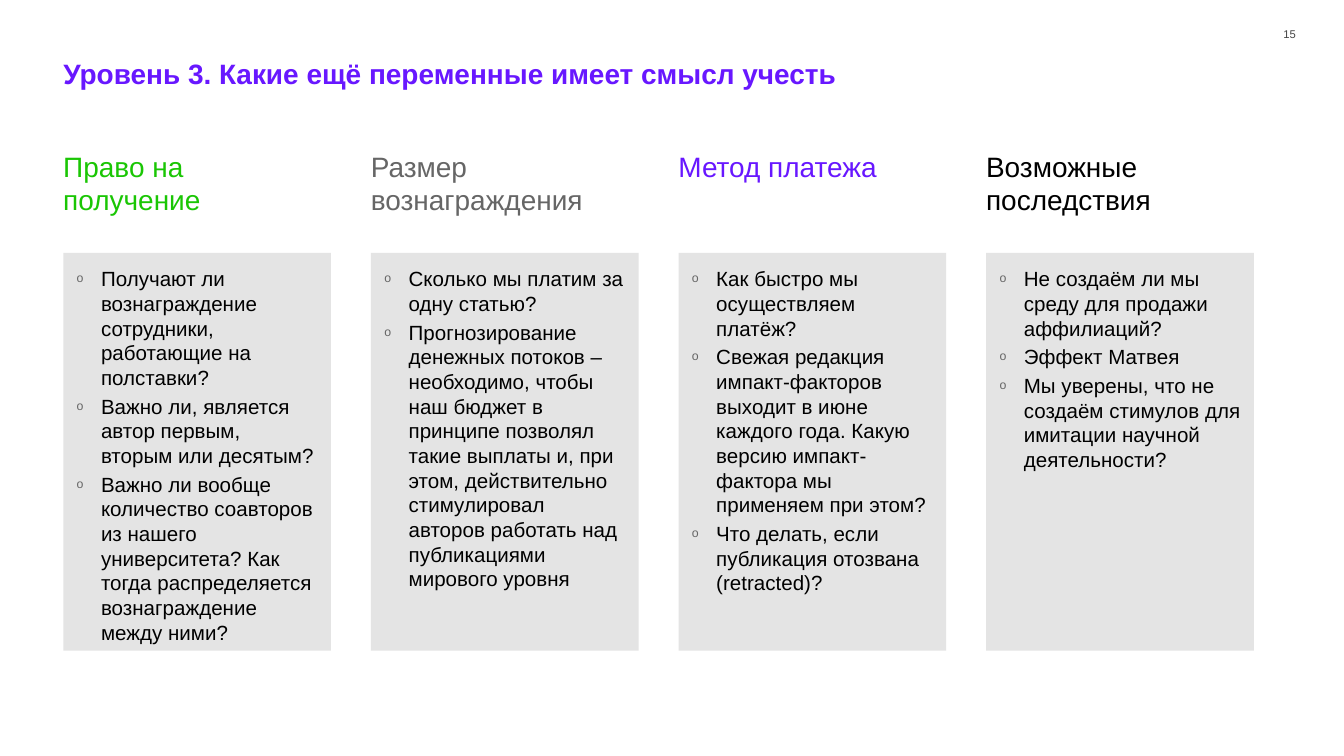
from dataclasses import dataclass

from lxml import etree
from pptx import Presentation
from pptx.dml.color import RGBColor
from pptx.enum.shapes import MSO_SHAPE
from pptx.enum.text import MSO_ANCHOR, MSO_AUTO_SIZE, PP_ALIGN
from pptx.oxml.ns import qn
from pptx.util import Pt

RECT = MSO_SHAPE.RECTANGLE
TOP, BOTTOM = MSO_ANCHOR.TOP, MSO_ANCHOR.BOTTOM
LEFT, RIGHT = PP_ALIGN.LEFT, PP_ALIGN.RIGHT
NO_FIT = MSO_AUTO_SIZE.NONE


@dataclass(frozen=True)
class Theme:
    font: str = "Arial"
    violet: str = "6817FF"
    green: str = "1AC604"
    grey: str = "666666"
    black: str = "000000"
    panel: str = "E4E4E4"
    page: str = "444444"
    head: float = 15
    body: float = 11
    small: float = 6
    lead: float = 1.0


THEME = Theme()
EDGE, STEP = 33.9, 164.8

COLUMNS = [
    ("Право на получение", THEME.green, [
        "Получают ли вознаграждение сотрудники, работающие на полставки?",
        "Важно ли, является автор первым, вторым или десятым?",
        "Важно ли вообще количество соавторов из нашего университета? "
        "Как тогда распределяется вознаграждение между ними?",
    ]),
    ("Размер вознаграждения", THEME.grey, [
        "Сколько мы платим за одну статью?",
        "Прогнозирование денежных потоков – необходимо, чтобы наш бюджет "
        "в принципе позволял такие выплаты и, при этом, действительно "
        "стимулировал авторов работать над публикациями мирового уровня",
    ]),
    ("Метод платежа", THEME.violet, [
        "Как быстро мы осуществляем платёж?",
        "Свежая редакция импакт-факторов выходит в июне каждого года. "
        "Какую версию импакт-фактора мы применяем при этом?",
        "Что делать, если публикация отозвана (retracted)?",
    ]),
    ("Возможные последствия", THEME.black, [
        "Не создаём ли мы среду для продажи аффилиаций?",
        "Эффект Матвея",
        "Мы уверены, что не создаём стимулов для имитации научной "
        "деятельности?",
    ]),
]


def apply(item, values):
    for name, value in values.items():
        setattr(item, name, value)


def set_frame(shape, anchor=TOP, pad=0):
    frame = shape.text_frame
    apply(frame, {
        "word_wrap": True, "auto_size": NO_FIT, "vertical_anchor": anchor,
        "margin_left": 0, "margin_top": Pt(pad),
        "margin_right": Pt(pad), "margin_bottom": Pt(pad),
    })
    return frame


def write(para, text, size, color, bold=False, **form):
    apply(para, {"alignment": LEFT, "line_spacing": THEME.lead, **form})
    run = para.add_run()
    run.text = text
    apply(run.font, {"name": THEME.font, "size": Pt(size), "bold": bold})
    run.font.color.rgb = RGBColor.from_string(color)


def add_bullet(para):
    props = para._p.get_or_add_pPr()
    props.set("marL", str(Pt(20.2)))
    props.set("indent", str(-Pt(13)))
    tint = etree.SubElement(props, qn("a:buClr"))
    etree.SubElement(tint, qn("a:srgbClr"), val=THEME.grey)
    etree.SubElement(props, qn("a:buSzPct"), val="60000")
    etree.SubElement(props, qn("a:buFont"), typeface=THEME.font)
    etree.SubElement(props, qn("a:buChar"), char="o")


def add_title(slide, text):
    title = slide.shapes.title
    apply(title, {"left": Pt(EDGE), "top": Pt(30.2),
                  "width": Pt(609), "height": Pt(24)})
    para = set_frame(title).paragraphs[0]
    write(para, text, THEME.head, THEME.violet, bold=True)


def add_label(slide, box, text, size, color, anchor=TOP, **form):
    shape = slide.shapes.add_textbox(*map(Pt, box))
    para = set_frame(shape, anchor).paragraphs[0]
    write(para, text, size, color, **form)


def add_panel(slide, box, items):
    panel = slide.shapes.add_shape(RECT, *map(Pt, box))
    panel.shadow.inherit = False
    panel.fill.solid()
    panel.fill.fore_color.rgb = RGBColor.from_string(THEME.panel)
    panel.line.fill.background()
    frame = set_frame(panel, pad=7.2)
    for i, text in enumerate(items):
        para = frame.add_paragraph() if i else frame.paragraphs[0]
        add_bullet(para)
        write(para, text, THEME.body, THEME.black,
              space_before=Pt(2.2 if i else 0))


def main():
    deck = Presentation()
    apply(deck, {"slide_width": Pt(720), "slide_height": Pt(405)})
    slide = deck.slides.add_slide(deck.slide_layouts[5])
    add_label(slide, (676.8, 8.6, 17.4, 13), "15", THEME.small, THEME.page,
              BOTTOM, alignment=RIGHT)
    add_title(slide, "Уровень 3. Какие ещё переменные имеет смысл учесть")
    for i, (head, color, items) in enumerate(COLUMNS):
        left = EDGE + i * STEP
        add_label(slide, (left, 80, 115.2, 38), head, THEME.head, color)
        add_panel(slide, (left, 135.4, 143.4, 213.2), items)
    deck.save("out.pptx")


if __name__ == "__main__":
    main()
